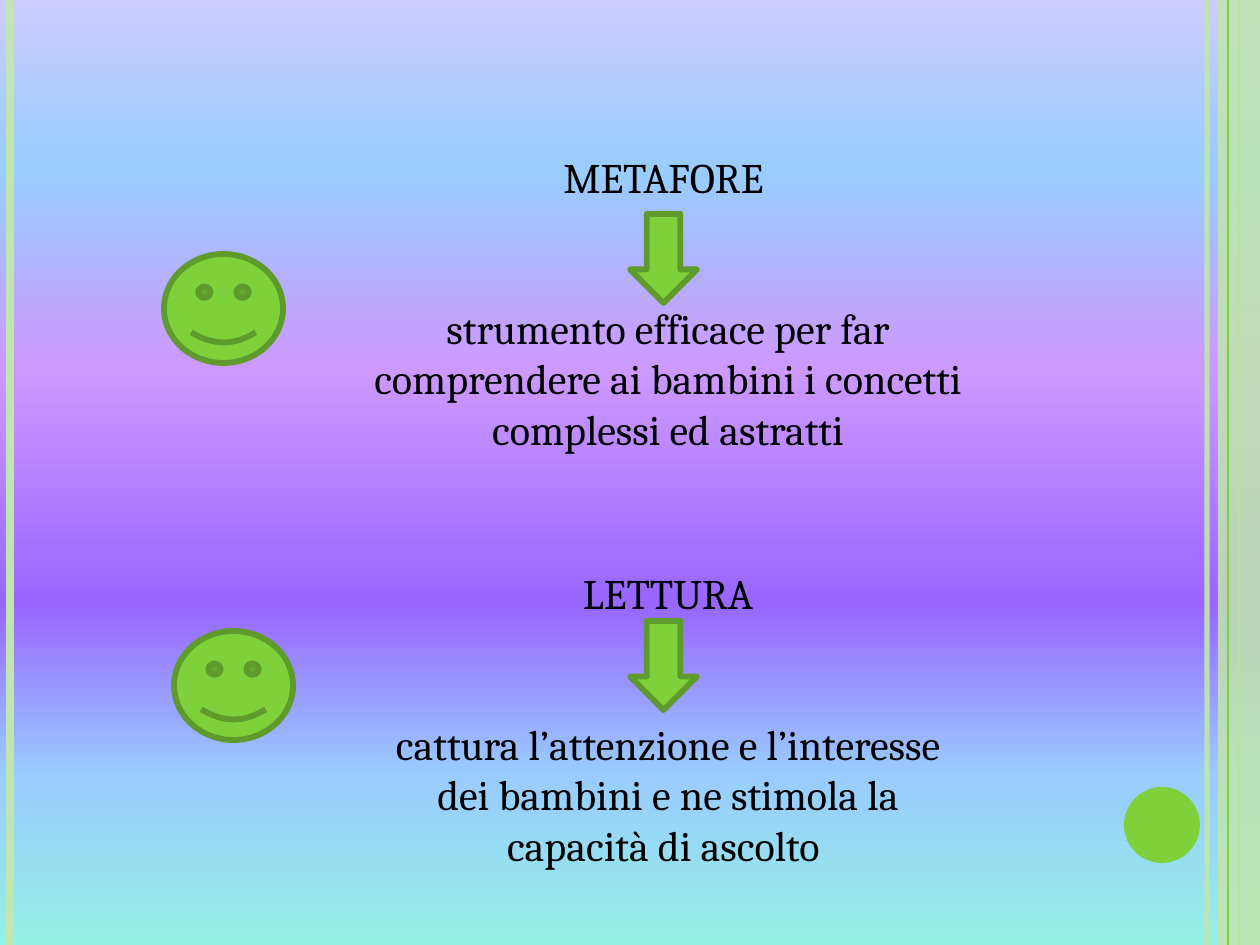
from lxml.etree import SubElement
from pptx import Presentation
from pptx.dml.color import RGBColor as RGB
from pptx.enum.shapes import MSO_CONNECTOR as LINE, MSO_SHAPE as SHAPE
from pptx.enum.text import MSO_ANCHOR as ANCHOR, PP_ALIGN as ALIGN
from pptx.oxml.ns import qn
from pptx.util import Emu, Pt

COLORS = {"green": "7FD13B", "outline": "5E9B2C", "pale": "C0E5AF", "text": "000000"}
SKY = [(0, "94F0E4"), (18, "99CCFF"), (36, "9966FF"),
       (61, "CC99FF"), (82, "99CCFF"), (100, "CCCCFF")]
WIDTH, HEIGHT = 1260, 945


def px(*lengths):
    return [Emu(round(length * 914400 / 126)) for length in lengths]


def paint(fill, color, opacity=100):
    fill.solid()
    fill.fore_color.rgb = RGB.from_string(COLORS[color])
    if opacity < 100:
        tint = fill._xPr.find(".//" + qn("a:srgbClr"))
        SubElement(tint, qn("a:alpha"), val=str(opacity * 1000))


prs = Presentation()
prs.slide_width, prs.slide_height = px(WIDTH, HEIGHT)
slide = prs.slides.add_slide(prs.slide_layouts[6])
shapes = slide.shapes

sky = slide.background.fill
sky.gradient()
sky.gradient_angle = 90
stops = slide.element.find(".//" + qn("a:gsLst"))
stops.clear()
for position, color in SKY:
    stop = SubElement(stops, qn("a:gs"), pos=str(position * 1000))
    SubElement(stop, qn("a:srgbClr"), val=color)

for x, color, weight, opacity in [(1207, "pale", 3, 93), (10, "pale", 4.5, 100),
                                  (1239, "green", 1.5, 100), (1228, "green", 0.75, 100)]:
    if x == 1228:
        band = shapes.add_shape(SHAPE.RECTANGLE, *px(1218, 0, 42, HEIGHT))
        band.shadow.inherit = False
        paint(band.fill, "pale", 87)
        band.line.fill.background()
    stripe = shapes.add_connector(LINE.STRAIGHT, *px(x, 0, x, HEIGHT))
    stripe.line.width = Pt(weight)
    paint(stripe.line.fill, color, opacity)
    SubElement(stripe._element.spPr, qn("a:effectLst"))

dot = shapes.add_shape(SHAPE.OVAL, *px(1124, 787, 76, 76))
dot.shadow.inherit = False
paint(dot.fill, "green")
dot.line.fill.background()

frame = shapes.add_textbox(*px(353, 145, 630, 966)).text_frame
for attribute, value in {"word_wrap": True, "vertical_anchor": ANCHOR.TOP}.items():
    setattr(frame, attribute, value)
messages = [
    ("METAFORE ", 0),
    ("strumento efficace per far comprendere ai bambini i concetti complessi ed astratti", 57.6),
    ("LETTURA", 65),
    ("cattura l’attenzione e l’interesse dei bambini e ne stimola la capacità di ascolto ", 57.6),
]
for index, (message, gap) in enumerate(messages):
    paragraph = frame.add_paragraph() if index else frame.paragraphs[0]
    paragraph.text = message
    paragraph.alignment = ALIGN.CENTER
    paragraph.space_before = Pt(gap)
    for attribute, value in {"name": "Cambria", "size": Pt(24)}.items():
        setattr(paragraph.runs[0].font, attribute, value)
    paint(paragraph.runs[0].font.fill, "text")

for kind, *box in [(SHAPE.SMILEY_FACE, 164, 254, 119, 109),
                   (SHAPE.SMILEY_FACE, 174, 631, 119, 109),
                   (SHAPE.DOWN_ARROW, 630, 621, 67, 89),
                   (SHAPE.DOWN_ARROW, 630, 214, 67, 89)]:
    symbol = shapes.add_shape(kind, *px(*box))
    symbol.shadow.inherit = False
    paint(symbol.fill, "green")
    paint(symbol.line.fill, "outline")
    symbol.line.width = Pt(3.35)

prs.save("out.pptx")
